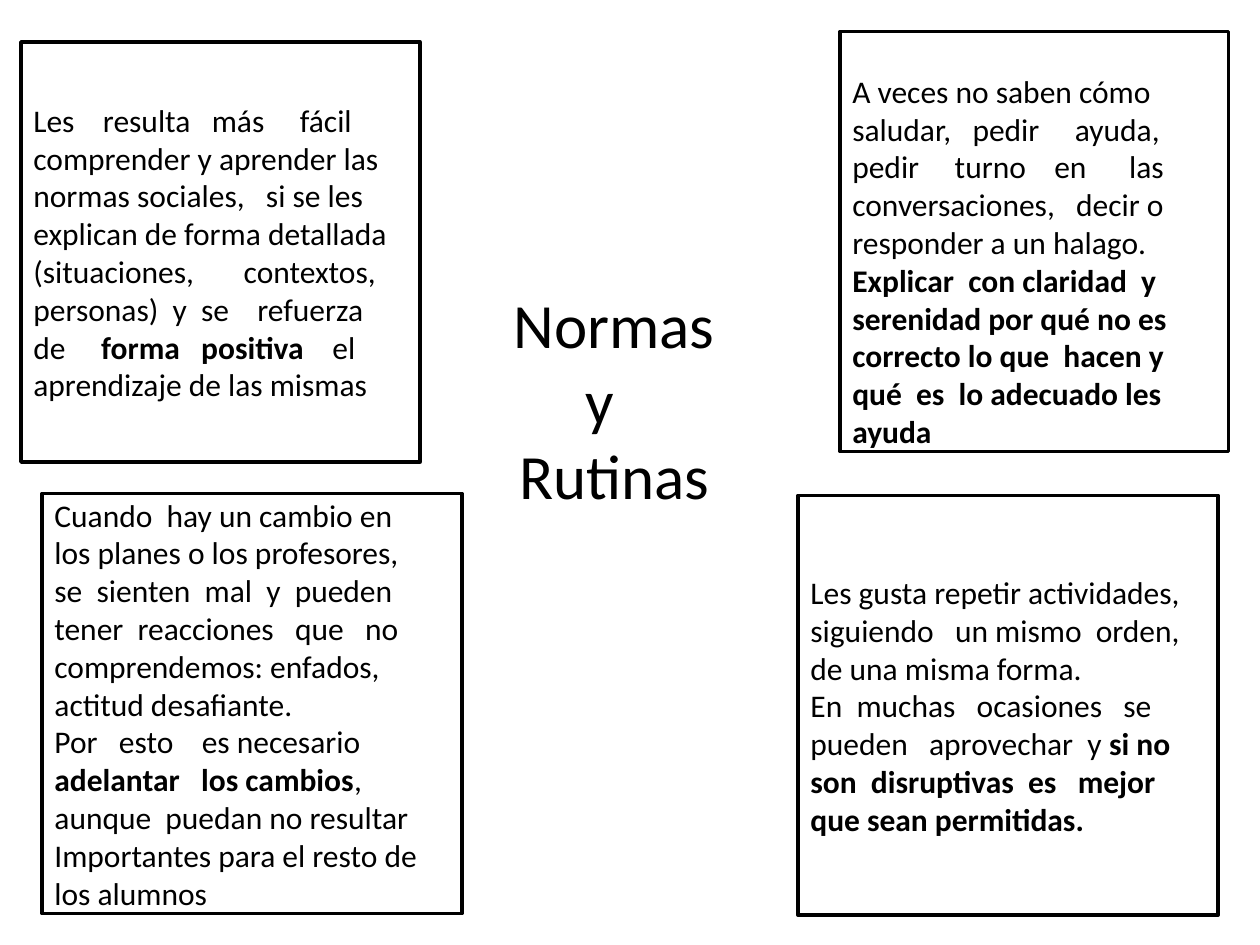
from pptx import Presentation
from pptx.dml.color import RGBColor
from pptx.enum.shapes import MSO_SHAPE
from pptx.enum.text import MSO_ANCHOR, MSO_AUTO_SIZE, PP_ALIGN
from pptx.util import Pt

COLORS = {"paper": "FFFFFF", "ink": "000000"}
FONT = "Calibri"
BODY_SIZE = 18
INSET = 3.6
LINE_HEIGHT = 22

# Each card: box (left, top, width, height), blank lines above, text.
# Asterisks enclose bold words.
CARDS = [
    ((12, 24, 228, 240), 0, [
        "Les    resulta   más     fácil",
        "comprender y aprender las",
        "normas sociales,   si se les",
        "explican de forma detallada",
        "(situaciones,       contextos,",
        "personas)  y  se    refuerza",
        "de     *forma   positiva*    el",
        "aprendizaje de las mismas",
    ]),
    ((24, 282, 240, 240), 0, [
        "Cuando  hay un cambio en",
        "los planes o los profesores,",
        "se  sienten  mal  y  pueden",
        "tener  reacciones   que   no",
        "comprendemos: enfados,",
        "actitud desafiante.",
        "Por   esto    es necesario",
        "*adelantar   los cambios*,",
        "aunque  puedan no resultar",
        "Importantes para el resto de",
        "los alumnos",
    ]),
    ((456, 283, 240, 240), 0, [
        "Les gusta repetir actividades,",
        "siguiendo   un mismo  orden,",
        "de una misma forma.",
        "En  muchas   ocasiones   se",
        "pueden   aprovechar  y *si no*",
        "*son  disruptivas  es   mejor*",
        "*que sean permitidas.*",
    ]),
    ((480, 18, 222, 240), 1, [
        "A veces no saben cómo",
        "saludar,   pedir     ayuda,",
        "pedir     turno    en      las",
        "conversaciones,   decir o",
        "responder a un halago.",
        "*Explicar  con claridad  y*",
        "*serenidad por qué no es*",
        "*correcto lo que  hacen y*",
        "*qué  es  lo adecuado les*",
        "*ayuda*",
    ]),
]


def color(name):
    return RGBColor.from_string(COLORS[name])


def format_run(run, size, bold=False):
    run.font.name = FONT
    run.font.size = Pt(size)
    run.font.bold = bold
    run.font.color.rgb = color("ink")


def place_title(slide, box, text):
    title = slide.shapes.title
    title.left, title.top, title.width, title.height = map(Pt, box)
    frame = title.text_frame
    frame.text = text
    frame.auto_size = MSO_AUTO_SIZE.NONE
    frame.vertical_anchor = MSO_ANCHOR.MIDDLE
    paragraph = frame.paragraphs[0]
    paragraph.alignment = PP_ALIGN.CENTER
    for run in paragraph.runs:
        format_run(run, 36)


def add_card(slide, box, blank_lines, lines):
    card = slide.shapes.add_shape(MSO_SHAPE.RECTANGLE, *map(Pt, box))
    card.shadow.inherit = False
    card.fill.solid()
    card.fill.fore_color.rgb = color("paper")
    card.line.color.rgb = color("ink")
    card.line.width = Pt(2)
    frame = card.text_frame
    frame.word_wrap = True
    frame.vertical_anchor = MSO_ANCHOR.MIDDLE
    frame.margin_top = Pt(INSET + blank_lines * LINE_HEIGHT)
    frame.text = "\n".join(lines)
    for paragraph, line in zip(frame.paragraphs, lines):
        paragraph.alignment = PP_ALIGN.LEFT
        paragraph.clear()
        for index, part in enumerate(line.split("*")):
            if part:
                run = paragraph.add_run()
                run.text = part
                format_run(run, BODY_SIZE, bold=index % 2 == 1)


def main():
    presentation = Presentation()
    presentation.slide_width, presentation.slide_height = Pt(720), Pt(540)
    slide = presentation.slides.add_slide(presentation.slide_layouts[0])
    subtitle = slide.placeholders[1].element
    subtitle.getparent().remove(subtitle)
    place_title(slide, (240, 180, 222, 96), " Normas \vy  \vRutinas")
    for box, blank_lines, lines in CARDS:
        add_card(slide, box, blank_lines, lines)
    presentation.save("out.pptx")


if __name__ == "__main__":
    main()
